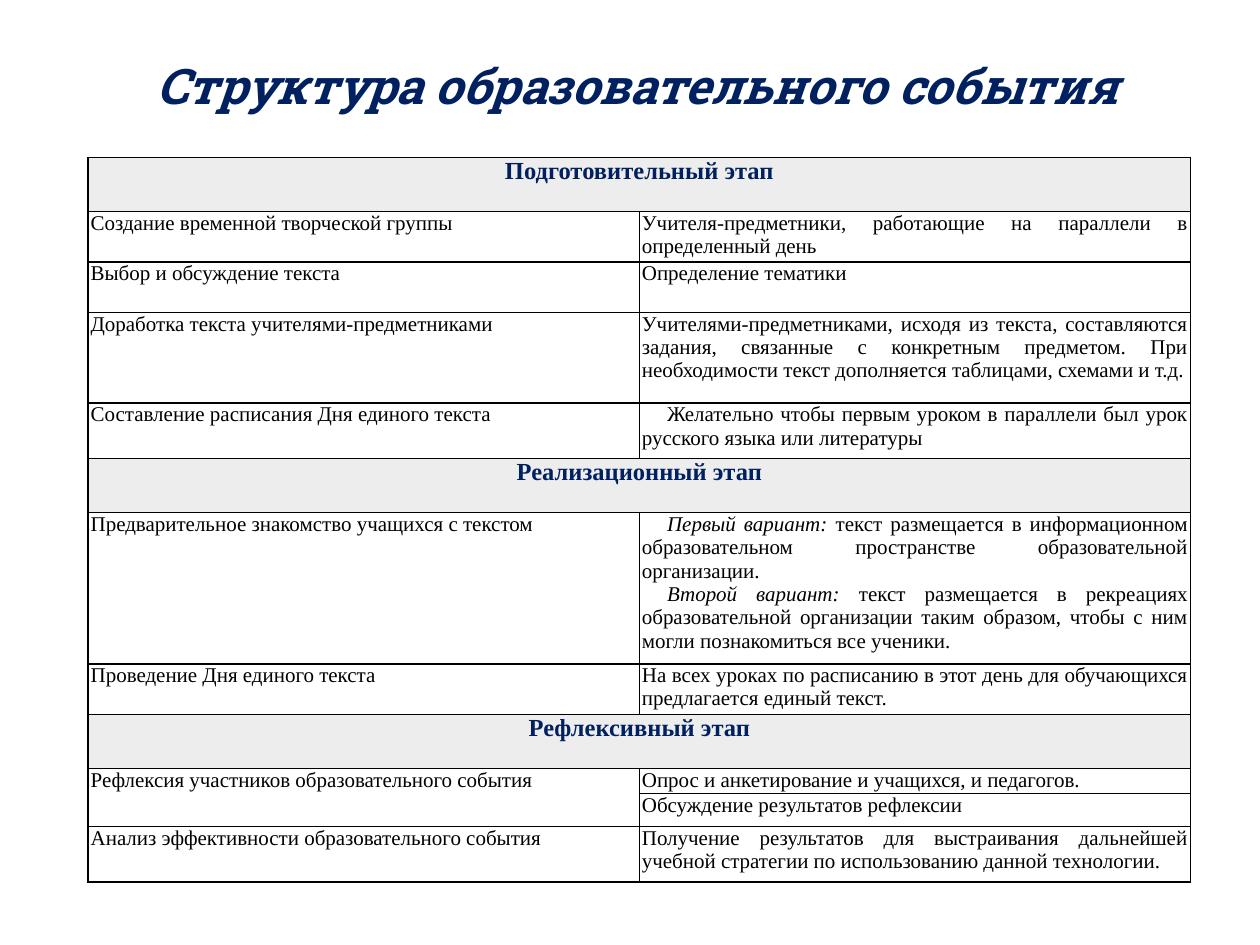
from lxml import etree
from pptx import Presentation
from pptx.dml.color import RGBColor
from pptx.enum.text import MSO_ANCHOR, MSO_AUTO_SIZE, PP_ALIGN
from pptx.oxml.ns import qn
from pptx.util import Inches, Pt

CENTER, JUSTIFY = PP_ALIGN.CENTER, PP_ALIGN.JUSTIFY
MIDDLE = MSO_ANCHOR.MIDDLE
GROW = MSO_AUTO_SIZE.SHAPE_TO_FIT_TEXT
NAVY = RGBColor(0x00, 0x20, 0x60)
BLACK = RGBColor(0, 0, 0)
WHITE = RGBColor(255, 255, 255)
GREY = RGBColor(0xED, 0xED, 0xED)
INDENT = Inches(0.2)

# Rows: (height in inches, cell texts); one text makes a stage heading.
# A cell is a list of paragraphs: (italic lead, text, indented).
ROWS = [
    (0.43, ["Подготовительный этап"]),
    (0.4, [[("", "Создание временной творческой группы", False)],
           [("", "Учителя-предметники, работающие на параллели в определенный день", False)]]),
    (0.4, [[("", "Выбор и обсуждение текста", False)],
           [("", "Определение тематики", False)]]),
    (0.72, [[("", "Доработка текста учителями-предметниками", False)],
            [("", "Учителями-предметниками, исходя из текста, составляются задания, "
              "связанные с конкретным предметом. При необходимости текст "
              "дополняется таблицами, схемами и т.д.", False)]]),
    (0.44, [[("", "Составление расписания Дня единого текста", False)],
            [("", "Желательно чтобы первым уроком в параллели был урок русского "
              "языка или литературы", True)]]),
    (0.43, ["Реализационный этап"]),
    (1.2, [[("", "Предварительное знакомство учащихся с текстом", False)],
           [("Первый вариант: ", "текст размещается в информационном образовательном "
             "пространстве образовательной организации.", True),
            ("Второй вариант: ", "текст размещается в рекреациях образовательной "
             "организации таким образом, чтобы с ним могли познакомиться все ученики.", True)]]),
    (0.4, [[("", "Проведение Дня единого текста", False)],
           [("", "На всех уроках по расписанию в этот день для обучающихся "
             "предлагается единый текст.", False)]]),
    (0.43, ["Рефлексивный этап"]),
    (0.2, [[("", "Рефлексия участников образовательного события", False)],
           [("", "Опрос и анкетирование и учащихся, и педагогов.", False)]]),
    (0.26, [[], [("", "Обсуждение результатов рефлексии", False)]]),
    (0.44, [[("", "Анализ эффективности образовательного события", False)],
            [("", "Получение результатов для выстраивания дальнейшей учебной "
              "стратегии по использованию данной технологии.", False)]]),
]
REFLECTION = 9  # its left cell spans two rows


def set_font(p, name, size, color, bold=False):
    p.font.name, p.font.size, p.font.bold = name, Pt(size), bold
    p.font.color.rgb = color


def format_cell(cell, fill):
    cell.margin_left = cell.margin_right = Inches(0.02)
    cell.margin_top = cell.margin_bottom = 0
    tcPr = cell._tc.get_or_add_tcPr()
    for side in ("a:lnL", "a:lnR", "a:lnT", "a:lnB"):
        ln = etree.SubElement(tcPr, qn(side), w=str(Pt(1)))
        solid = etree.SubElement(ln, qn("a:solidFill"))
        etree.SubElement(solid, qn("a:srgbClr"), val=str(BLACK))
    cell.fill.solid()
    cell.fill.fore_color.rgb = fill


prs = Presentation()
prs.slide_width, prs.slide_height = Inches(10), Inches(7.5)
W, H = prs.slide_width, prs.slide_height
s = prs.slides.add_slide(prs.slide_layouts[6])

# Table of stages
height = Inches(sum(h for h, _ in ROWS))
table = s.shapes.add_table(len(ROWS), 2, int(W * 0.07), int(H / 6),
                           int(W * 0.875), height).table
table.first_row = table.horz_banding = False

for i, (row_height, texts) in enumerate(ROWS):
    table.rows[i].height = Inches(row_height)
    heading = len(texts) == 1
    for j in range(2):
        cell = table.cell(i, j)
        format_cell(cell, GREY if heading else WHITE)
        tf = cell.text_frame
        set_font(tf.paragraphs[0], "Times New Roman", 12, BLACK)
        if heading:
            continue
        for n, (lead, text, indented) in enumerate(texts[j]):
            p = tf.add_paragraph() if n else tf.paragraphs[0]
            p.alignment = JUSTIFY
            set_font(p, "Times New Roman", 12, BLACK)
            if indented:
                p._p.get_or_add_pPr().set("indent", str(INDENT))
            if lead:
                r = p.add_run()
                r.text, r.font.italic = lead, True
            p.add_run().text = text
    if heading:
        table.cell(i, 0).merge(table.cell(i, 1))
        p = table.cell(i, 0).text_frame.paragraphs[0]
        p.text, p.alignment = texts[0], CENTER
        set_font(p, "Times New Roman", 14, NAVY, True)

table.cell(REFLECTION, 0).merge(table.cell(REFLECTION + 1, 0))

# Title
tf = s.shapes.add_textbox(int(W * 0.039), int(H * 0.052),
                          int(W * 0.913), int(H * 0.076)).text_frame
tf.word_wrap, tf.auto_size, tf.vertical_anchor = False, GROW, MIDDLE
p = tf.paragraphs[0]
p.text, p.alignment = "Структура образовательного события", CENTER
p._p.get_or_add_pPr().set("indent", str(INDENT))
set_font(p, "Roboto Slab", 28, NAVY, True)
p.font.italic = True

prs.save("out.pptx")
